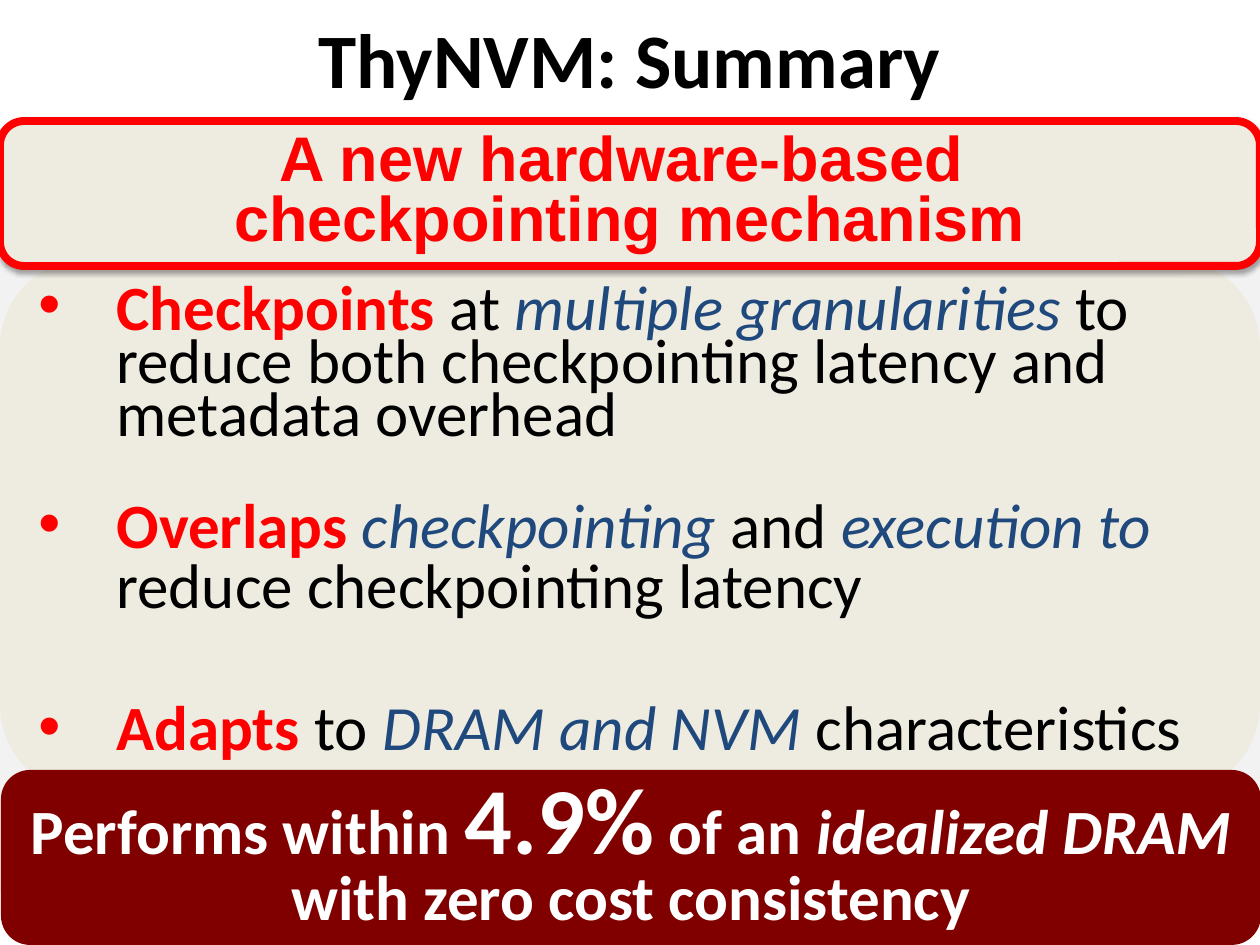
from lxml import etree
from pptx import Presentation
from pptx.dml.color import RGBColor
from pptx.enum.shapes import MSO_SHAPE as Shape
from pptx.enum.text import MSO_ANCHOR as Anchor, PP_ALIGN as Align
from pptx.oxml import parse_xml
from pptx.oxml.ns import nsdecls, qn
from pptx.util import Emu, Pt

EMU_PER_PX = 914400 / 126
SLIDE_W, SLIDE_H = 1260, 945

BLACK = RGBColor(0x00, 0x00, 0x00)
WHITE = RGBColor(0xFF, 0xFF, 0xFF)
RED = RGBColor(0xFF, 0x00, 0x00)
BLUE = RGBColor(0x1F, 0x49, 0x7D)
MAROON = RGBColor(0x80, 0x00, 0x00)
BEIGE = RGBColor(0xEE, 0xEC, 0xE1)
PALE_GREY = RGBColor(0xF2, 0xF2, 0xF2)

# Run styles: colour, bold, italic
PLAIN = (BLACK, False, False)
KEYWORD = (RED, True, False)
EMPHASIS = (BLUE, False, True)
STRONG = (WHITE, True, False)
STRONG_ITALIC = (WHITE, True, True)
TITLE = (BLACK, True, False)


def px(length):
    return Emu(round(length * EMU_PER_PX))


class SummarySlide:
    def __init__(self, prs, font="Calibri", size=36):
        self.slide = prs.slides.add_slide(prs.slide_layouts[5])
        self.font, self.size = font, size

    def style(self, run, look, size=None, font=None):
        color, bold, italic = look
        run.font.name = font or self.font
        run.font.size = Pt(size or self.size)
        run.font.bold, run.font.italic = bold, italic
        run.font.color.rgb = color

    def title(self, text, left, top, width, height):
        box = self.slide.shapes.title
        box.left, box.top, box.width, box.height = map(px, (left, top, width, height))
        box.text_frame.text = text
        box.text_frame.vertical_anchor = Anchor.MIDDLE
        paragraph = box.text_frame.paragraphs[0]
        paragraph.alignment = Align.CENTER
        self.style(paragraph.runs[0], TITLE, size=44)

    def panel(self, left, top, width, height, fill, kind=Shape.ROUNDED_RECTANGLE):
        panel = self.slide.shapes.add_shape(kind, *map(px, (left, top, width, height)))
        panel.shadow.inherit = False
        panel.fill.solid()
        panel.fill.fore_color.rgb = fill
        panel.line.fill.background()
        panel.text_frame.word_wrap = True
        panel.text_frame.vertical_anchor = Anchor.MIDDLE
        return panel

    def outline(self, panel, color, width):
        panel.line.color.rgb = color
        panel.line.width = Pt(width)

    def drop_shadow(self, panel):
        effects = panel._element.spPr.find(qn("a:effectLst"))
        effects.append(parse_xml(
            f'<a:outerShdw {nsdecls("a")} blurRad="{Pt(3.1)}" dist="{Pt(1.8)}" '
            'dir="5400000" rotWithShape="0"><a:srgbClr val="000000">'
            '<a:alpha val="35000"/></a:srgbClr></a:outerShdw>'))

    def paragraph(self, panel, parts, spacing, font=None, align=Align.CENTER):
        """Add one paragraph of (text, look[, size]) parts, using the first if still empty."""
        frame = panel.text_frame
        first = frame.paragraphs[0]
        paragraph = frame.add_paragraph() if first.runs else first
        paragraph.alignment = align
        paragraph.line_spacing = spacing
        for text, *look in parts:
            run = paragraph.add_run()
            run.text = text
            self.style(run, *look, font=font)
        return paragraph

    def bullet(self, panel, parts, spacing, space_before):
        paragraph = self.paragraph(panel, parts, spacing, align=Align.LEFT)
        if space_before:
            paragraph.space_before = Pt(space_before)
        props = paragraph._p.get_or_add_pPr()
        props.set("marL", str(px(78)))
        props.set("indent", str(px(-78)))
        etree.SubElement(props, qn("a:buFont")).set("typeface", "Arial")
        etree.SubElement(props, qn("a:buChar")).set("char", "•")


# Parts, line spacing, space before
FEATURES = [
    ([("Checkpoints", KEYWORD), (" at ", PLAIN), ("multiple granularities ", EMPHASIS),
      ("to reduce both checkpointing latency and metadata overhead", PLAIN)], 0.7, 0),
    ([("Overlaps ", KEYWORD), ("checkpointing", EMPHASIS), (" and ", PLAIN),
      ("execution to ", EMPHASIS), ("reduce checkpointing latency", PLAIN)], 0.8, 30),
    ([("Adapts", KEYWORD), (" to ", PLAIN), ("DRAM and NVM ", EMPHASIS),
      ("characteristics", PLAIN)], 1.1, 34),
]
RESULT = [("Performs within ", STRONG), ("4.9%", STRONG, 54), (" of an ", STRONG),
          ("idealized DRAM ", STRONG_ITALIC), ("with zero cost consistency", STRONG)]
HEADLINE = ["A new hardware-based ", "checkpointing mechanism"]


def main():
    prs = Presentation()
    prs.slide_width, prs.slide_height = px(SLIDE_W), px(SLIDE_H)
    summary = SummarySlide(prs)

    summary.title("ThyNVM: Summary", 0, -21, SLIDE_W, 158)
    summary.panel(0, 136, SLIDE_W, 756, PALE_GREY, Shape.RECTANGLE)

    features = summary.panel(0, 258, SLIDE_W, 536, BEIGE)
    for parts, spacing, space_before in FEATURES:
        summary.bullet(features, parts, spacing, space_before)

    result = summary.panel(1, 770, SLIDE_W, 175, MAROON)
    summary.paragraph(result, RESULT, 0.8)

    headline = summary.panel(0, 121, SLIDE_W, 145, BEIGE)
    summary.outline(headline, RED, 4.5)
    summary.drop_shadow(headline)
    for line in HEADLINE:
        summary.paragraph(headline, [(line, KEYWORD)], 0.8, font="Arial")

    prs.save("out.pptx")


if __name__ == "__main__":
    main()
